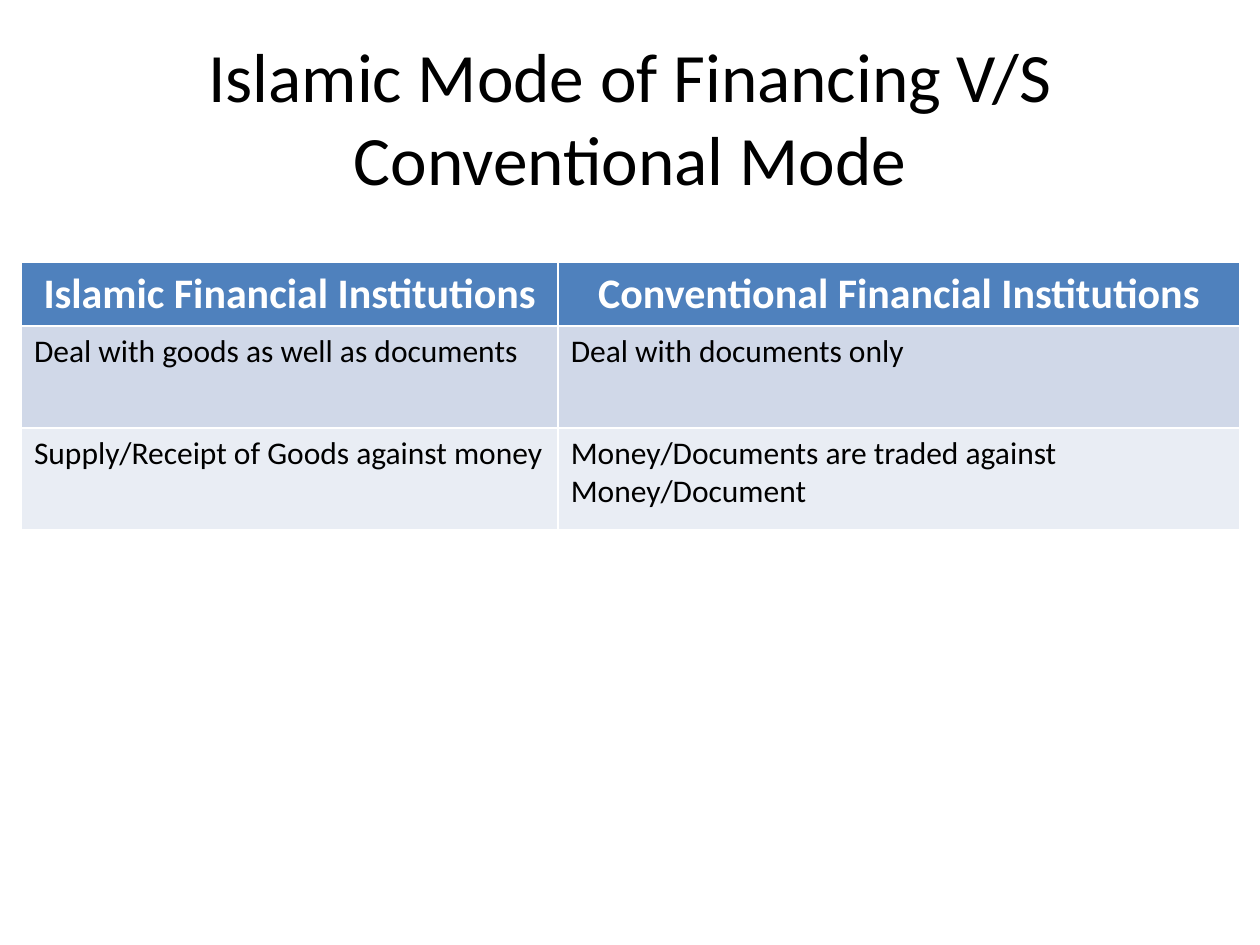
"""Build a slide comparing Islamic and conventional modes of financing."""
import pptx
import pptx.dml.color
import pptx.enum.text
import pptx.util

Inches = pptx.util.Inches
RGBColor = pptx.dml.color.RGBColor
ALIGN = pptx.enum.text.PP_ALIGN
ANCHOR = pptx.enum.text.MSO_ANCHOR

TITLE = "Islamic Mode of Financing V/S Conventional Mode"
ROWS = [
    ("Islamic Financial Institutions", "Conventional Financial Institutions"),
    ("Deal with goods as well as documents", "Deal with documents only"),
    ("Supply/Receipt of Goods against money",
     "Money/Documents are traded against Money/Document"),
]
COLUMN_WIDTHS = (4.26, 5.41)
ROW_HEIGHTS = (0.5, 0.81, 0.81)

FONT = "Calibri"
BLACK = RGBColor(0x00, 0x00, 0x00)
WHITE = RGBColor(0xFF, 0xFF, 0xFF)
HEADER_BLUE = RGBColor(0x4F, 0x81, 0xBD)
BAND_DARK = RGBColor(0xD0, 0xD8, 0xE8)
BAND_LIGHT = RGBColor(0xE9, 0xED, 0xF4)
ROW_FILLS = (HEADER_BLUE, BAND_DARK, BAND_LIGHT)


def write(frame, text, size, color, align, bold=False):
    para = frame.paragraphs[0]
    para.alignment = align
    span = para.add_run()
    span.text = text
    span.font.name = FONT
    span.font.size = pptx.util.Pt(size)
    span.font.bold = bold
    span.font.color.rgb = color


def add_title(page):
    box = page.shapes.title
    box.left, box.top = Inches(0.5), Inches(0.3)
    box.width, box.height = Inches(9), Inches(1.25)
    box.text_frame.vertical_anchor = ANCHOR.MIDDLE
    write(box.text_frame, TITLE, 39.6, BLACK, ALIGN.CENTER)


def add_comparison(page):
    table = page.shapes.add_table(
        len(ROWS), len(COLUMN_WIDTHS), Inches(0.17), Inches(2.08),
        Inches(sum(COLUMN_WIDTHS)), Inches(sum(ROW_HEIGHTS))).table
    for column, width in zip(table.columns, COLUMN_WIDTHS):
        column.width = Inches(width)
    for index, (row, texts) in enumerate(zip(table.rows, ROWS)):
        row.height = Inches(ROW_HEIGHTS[index])
        for cell, text in zip(row.cells, texts):
            cell.fill.solid()
            cell.fill.fore_color.rgb = ROW_FILLS[index]
            if index == 0:
                write(cell.text_frame, text, 24, WHITE, ALIGN.CENTER, True)
            else:
                write(cell.text_frame, text, 18, BLACK, ALIGN.LEFT)


def main():
    deck = pptx.Presentation()
    deck.slide_width, deck.slide_height = Inches(10), Inches(7.5)
    page = deck.slides.add_slide(deck.slide_layouts.get_by_name("Title Only"))
    add_title(page)
    add_comparison(page)
    deck.save("out.pptx")


if __name__ == "__main__":
    main()
